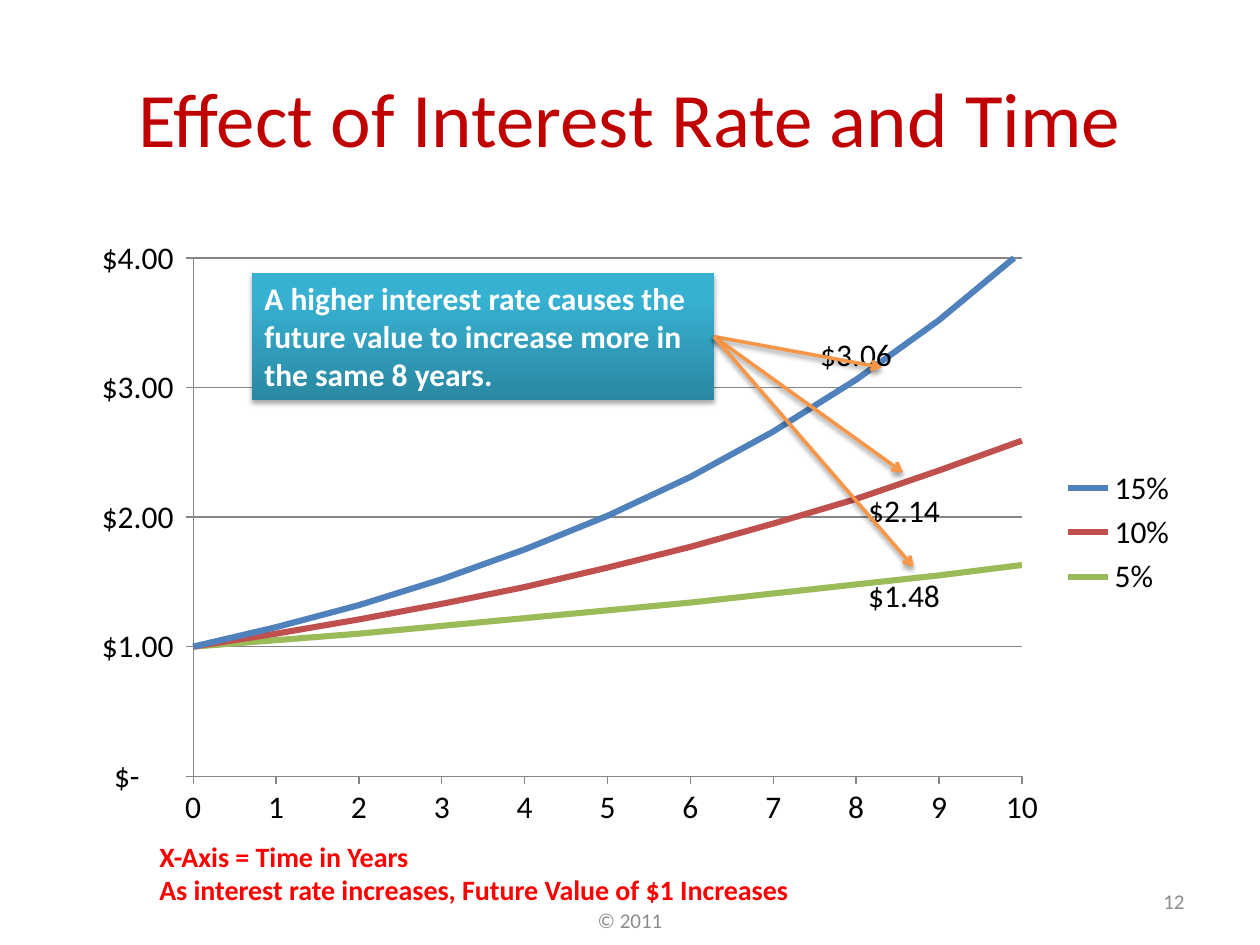
"""Build the slide on the effect of interest rate and time on future value."""
from lxml import etree
from pptx import Presentation
from pptx.chart.data import XyChartData
from pptx.dml.color import RGBColor
from pptx.enum.chart import XL_CHART_TYPE, XL_LABEL_POSITION, XL_LEGEND_POSITION, XL_MARKER_STYLE, XL_TICK_MARK
from pptx.enum.shapes import MSO_CONNECTOR, MSO_SHAPE
from pptx.enum.text import MSO_ANCHOR, PP_ALIGN
from pptx.oxml.ns import qn
from pptx.util import Pt

SCATTER = XL_CHART_TYPE.XY_SCATTER_SMOOTH_NO_MARKERS
ABOVE, BESIDE = XL_LABEL_POSITION.ABOVE, XL_LABEL_POSITION.RIGHT
TOP, MIDDLE = MSO_ANCHOR.TOP, MSO_ANCHOR.MIDDLE
LEFT, CENTER, RIGHT = PP_ALIGN.LEFT, PP_ALIGN.CENTER, PP_ALIGN.RIGHT

BLACK = RGBColor(0x00, 0x00, 0x00)
WHITE = RGBColor(0xFF, 0xFF, 0xFF)
DARK_RED = RGBColor(0xC0, 0x00, 0x00)
RED = RGBColor(0xFF, 0x00, 0x00)
GRAY = RGBColor(0x8C, 0x8C, 0x8C)
AXIS_GRAY = RGBColor(0x86, 0x86, 0x86)
ORANGE = RGBColor(0xF7, 0x96, 0x46)
TEAL_DARK = RGBColor(0x2A, 0x88, 0xA2)
TEAL_LIGHT = RGBColor(0x37, 0xB1, 0xD2)

FONT = "Calibri"
MONEY = '_("$"* #,##0.00_);_("$"* \\(#,##0.00\\);_("$"* "-"??_);_(@_)'
YEARS = range(11)
LABEL_YEAR = 8
RATES = [
    ("15%", 0.15, RGBColor(0x4F, 0x81, 0xBD), ABOVE, 0),
    ("10%", 0.10, RGBColor(0xC0, 0x50, 0x4D), BESIDE, 0.02),
    ("5%", 0.05, RGBColor(0x9B, 0xBB, 0x59), BESIDE, 0.02),
]
CHART_BOX = (40, 130, 640, 348.5)
PLOT = {"x": 0.11, "y": 0.05, "w": 0.74, "h": 0.85}

TEXTS = [
    (["Effect of Interest Rate and Time"], (36, 21.6, 648, 90), 44, DARK_RED, False, CENTER, MIDDLE),
    (["X-Axis = Time in Years", "As interest rate increases, Future Value of $1 Increases"],
     (84, 476, 382, 46), 16, RED, True, LEFT, TOP),
    (["© 2011"], (246, 511, 228, 29), 12, GRAY, False, CENTER, MIDDLE),
    (["12"], (516, 500.5, 168, 29), 12, GRAY, False, RIGHT, MIDDLE),
]
CALLOUT = ["A higher interest rate causes the future value to increase more in the same 8 years."]
CALLOUT_BOX = (144, 156, 264, 72.7)
ARROW_TIPS = [(504, 210), (516, 270), (522, 324)]


def write(sp, lines, size, color, bold, align, anchor):
    tf = sp.text_frame
    tf.word_wrap = True
    tf.vertical_anchor = anchor
    tf.text = "\n".join(lines)
    for p in tf.paragraphs:
        p.alignment = align
        font = p.runs[0].font
        font.name, font.size, font.bold = FONT, Pt(size), bold
        font.color.rgb = color


def add(parent, tag, **attrs):
    return etree.SubElement(parent, qn(tag), {k: str(v) for k, v in attrs.items()})


def add_shadow(sp, alpha):
    effects = add(sp._element.spPr, "a:effectLst")
    shadow = add(effects, "a:outerShdw", blurRad=Pt(3.1), dist=Pt(1.8), dir=5400000, rotWithShape=0)
    add(add(shadow, "a:srgbClr", val="000000"), "a:alpha", val=alpha * 1000)


def make_layout(**places):
    layout = etree.Element(qn("c:layout"))
    manual = add(layout, "c:manualLayout")
    for name, value in places.items():
        add(manual, f"c:{name}", val=value)
    return layout


def style_axis(axis, top):
    axis.minimum_scale, axis.maximum_scale, axis.major_unit = 0, top, 1
    axis.major_tick_mark = XL_TICK_MARK.OUTSIDE
    axis.minor_tick_mark = XL_TICK_MARK.NONE
    axis.format.line.color.rgb = AXIS_GRAY


def add_growth_chart(s):
    data = XyChartData(number_format=MONEY)
    for name, rate, *_ in RATES:
        series = data.add_series(name)
        for year in YEARS:
            series.add_data_point(year, round((1 + rate) ** year, 2))
    chart = s.shapes.add_chart(SCATTER, *map(Pt, CHART_BOX), data).chart
    chart.has_title = False
    chart.font.name, chart.font.size = FONT, Pt(18)
    chart.font.color.rgb = BLACK
    chart.has_legend = True
    chart.legend.position = XL_LEGEND_POSITION.RIGHT
    chart.legend.include_in_layout = False

    x_axis, y_axis = chart.category_axis, chart.value_axis
    style_axis(x_axis, 10)
    style_axis(y_axis, 4)
    x_axis.has_major_gridlines = False
    x_axis.tick_labels.number_format = "General"
    x_axis.tick_labels.number_format_is_linked = False
    y_axis.has_major_gridlines = True
    y_axis.major_gridlines.format.line.color.rgb = AXIS_GRAY
    y_axis.tick_labels.number_format = MONEY
    y_axis.tick_labels.number_format_is_linked = False

    plot_area = chart._chartSpace.chart.plotArea
    for old in plot_area.findall(qn("c:layout")):
        plot_area.remove(old)
    plot_area.insert(0, make_layout(layoutTarget="inner", xMode="edge", yMode="edge", **PLOT))

    for series, (_, _, color, position, drop) in zip(chart.plots[0].series, RATES):
        series.smooth = True
        series.marker.style = XL_MARKER_STYLE.NONE
        series.format.line.color.rgb = color
        series.format.line.width = Pt(3.5)
        series.points[LABEL_YEAR].data_label.position = position
        if drop:
            label = series._element.find(".//" + qn("c:dLbl"))
            label.insert(1, make_layout(x=0, y=drop))


def add_callout(s):
    box = s.shapes.add_shape(MSO_SHAPE.RECTANGLE, *map(Pt, CALLOUT_BOX))
    box.fill.gradient()
    box.fill.gradient_angle = 90
    stops = zip(box.fill.gradient_stops, (0, 0.8), (TEAL_DARK, TEAL_LIGHT))
    for stop, position, color in stops:
        stop.position = position
        stop.color.rgb = color
    box.line.fill.background()
    add_shadow(box, 35)
    write(box, CALLOUT, 18, WHITE, True, LEFT, TOP)
    return box


def add_arrow(s, box, tip):
    x, y = map(Pt, tip)
    arrow = s.shapes.add_connector(MSO_CONNECTOR.STRAIGHT, 0, 0, x, y)
    arrow.begin_connect(box, 3)
    arrow.line.color.rgb = ORANGE
    arrow.line.width = Pt(2)
    add(arrow.line._get_or_add_ln(), "a:tailEnd", type="arrow")
    add_shadow(arrow, 38)


def main():
    prs = Presentation()
    prs.slide_width, prs.slide_height = Pt(720), Pt(540)
    s = prs.slides.add_slide(prs.slide_layouts[6])
    add_growth_chart(s)
    for lines, box, *style in TEXTS:
        write(s.shapes.add_textbox(*map(Pt, box)), lines, *style)
    callout = add_callout(s)
    for tip in ARROW_TIPS:
        add_arrow(s, callout, tip)
    prs.save("out.pptx")


if __name__ == "__main__":
    main()
